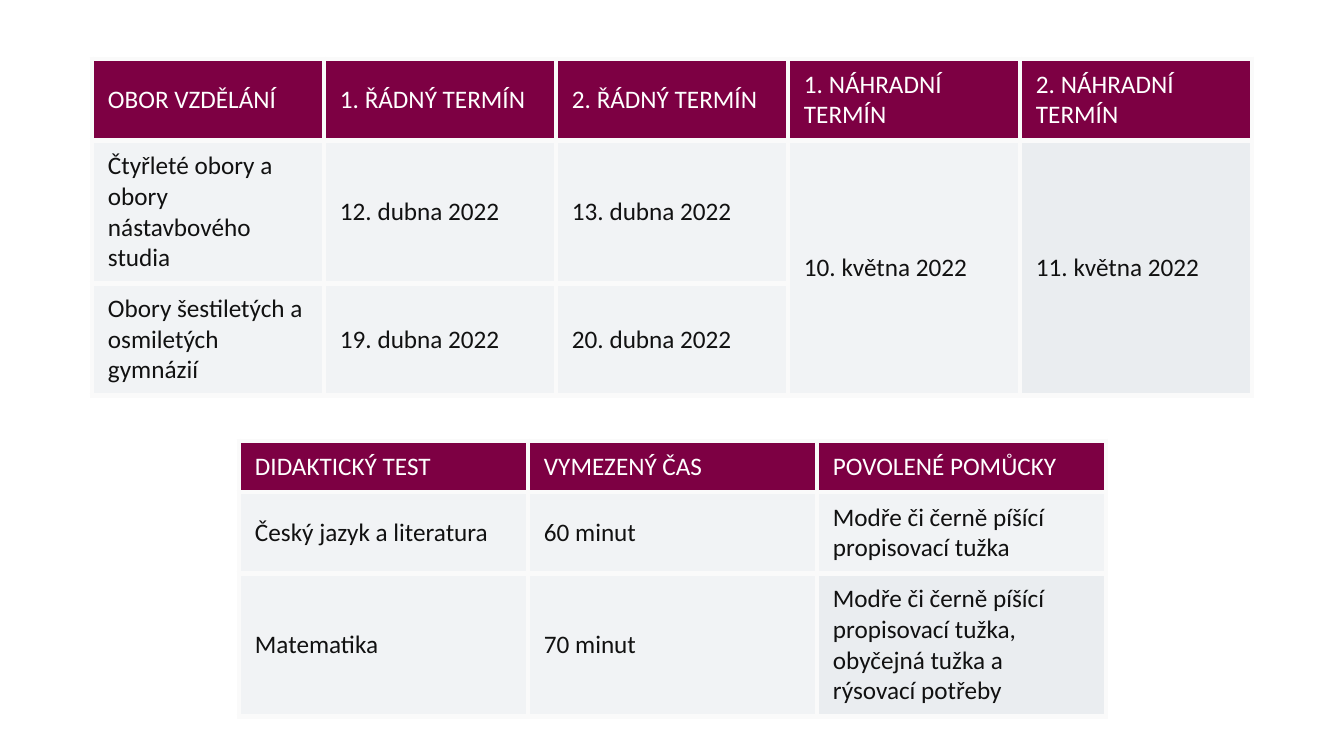
from dataclasses import dataclass

from lxml import etree
from pptx import Presentation, util as u
from pptx.dml.color import RGBColor
from pptx.enum import text
from pptx.oxml import ns

PX_PER_INCH = 100.8
FONT = "Calibri"
HEADER_FILL, BODY_FILL, CORNER_FILL = "7D0043", "F1F3F5", "EAEDF0"
HEADER_TEXT, BODY_TEXT = "FFFFFF", "111111"
BORDER_COLOR, BORDER_WIDTH = "FAFAFA", u.Pt(3.75)


@dataclass(frozen=True)
class Grid:
    """A table in px; a None cell continues the cell above it."""
    left: int
    top: int
    column_width: int
    row_heights: list[int]
    rows: list[list[str | None]]


EXAM_DATES = Grid(92, 59, 232, [81, 142, 112], [
    ["OBOR VZDĚLÁNÍ", "1. ŘÁDNÝ TERMÍN", "2. ŘÁDNÝ TERMÍN",
     "1. NÁHRADNÍ TERMÍN", "2. NÁHRADNÍ TERMÍN"],
    ["Čtyřleté obory a obory nástavbového studia", "12. dubna 2022",
     "13. dubna 2022", "10. května 2022", "11. května 2022"],
    ["Obory šestiletých a osmiletých gymnázií", "19. dubna 2022",
     "20. dubna 2022", None, None],
])
TEST_RULES = Grid(239, 441, 289, [51, 81, 142], [
    ["DIDAKTICKÝ TEST", "VYMEZENÝ ČAS", "POVOLENÉ POMŮCKY"],
    ["Český jazyk a literatura", "60 minut",
     "Modře či černě píšící propisovací tužka"],
    ["Matematika", "70 minut",
     "Modře či černě píšící propisovací tužka, obyčejná tužka a rýsovací potřeby"],
])


def px(length: int) -> u.Emu:
    return u.Emu(round(length * 914400 / PX_PER_INCH))


def color(value: str) -> RGBColor:
    return RGBColor.from_string(value)


CELL_FORMAT = {
    "margin_left": px(16), "margin_right": px(16),
    "margin_top": px(10), "margin_bottom": px(10),
    "vertical_anchor": text.MSO_ANCHOR.MIDDLE,
}
FONT_FORMAT = {"name": FONT, "size": u.Pt(18), "bold": False}


def set_format(target: object, values: dict[str, object]) -> None:
    for name, value in values.items():
        setattr(target, name, value)


def add_borders(cell) -> None:
    """Line all four sides; call before filling, since lines precede the fill."""
    properties = cell._tc.get_or_add_tcPr()
    for side in ("a:lnL", "a:lnR", "a:lnT", "a:lnB"):
        line = etree.SubElement(properties, ns.qn(side), w=str(BORDER_WIDTH))
        solid = etree.SubElement(line, ns.qn("a:solidFill"))
        etree.SubElement(solid, ns.qn("a:srgbClr"), val=BORDER_COLOR)


def style_cell(cell, fill: str) -> None:
    add_borders(cell)
    set_format(cell, CELL_FORMAT)
    cell.fill.solid()
    cell.fill.fore_color.rgb = color(fill)


def write_cell(cell, words: str, ink: str) -> None:
    span = cell.text_frame.paragraphs[0].add_run()
    span.text = words
    set_format(span.font, FONT_FORMAT)
    span.font.color.rgb = color(ink)


def fill_for(grid: Grid, row: int, column: int) -> str:
    """The cell that reaches the bottom right corner has its own tint."""
    if row == 0:
        return HEADER_FILL
    reaches_bottom = all(below[column] is None for below in grid.rows[row + 1:])
    is_corner = reaches_bottom and column == len(grid.rows[0]) - 1
    return CORNER_FILL if is_corner else BODY_FILL


def draw_grid(page, grid: Grid) -> None:
    columns = len(grid.rows[0])
    table = page.shapes.add_table(
        len(grid.rows), columns, px(grid.left), px(grid.top),
        px(columns * grid.column_width), px(sum(grid.row_heights))).table
    for column in table.columns:
        column.width = px(grid.column_width)
    for row, height in zip(table.rows, grid.row_heights):
        row.height = px(height)
    for r, words_in_row in enumerate(grid.rows):
        for c, words in enumerate(words_in_row):
            cell = table.cell(r, c)
            style_cell(cell, fill_for(grid, r, c))
            if words is None:
                table.cell(r - 1, c).merge(cell)
            else:
                write_cell(cell, words, BODY_TEXT if r else HEADER_TEXT)


def main() -> None:
    deck = Presentation()
    deck.slide_width, deck.slide_height = px(1344), px(756)
    page = deck.slides.add_slide(deck.slide_layouts[6])
    for grid in (EXAM_DATES, TEST_RULES):
        draw_grid(page, grid)
    deck.save("out.pptx")


if __name__ == "__main__":
    main()
